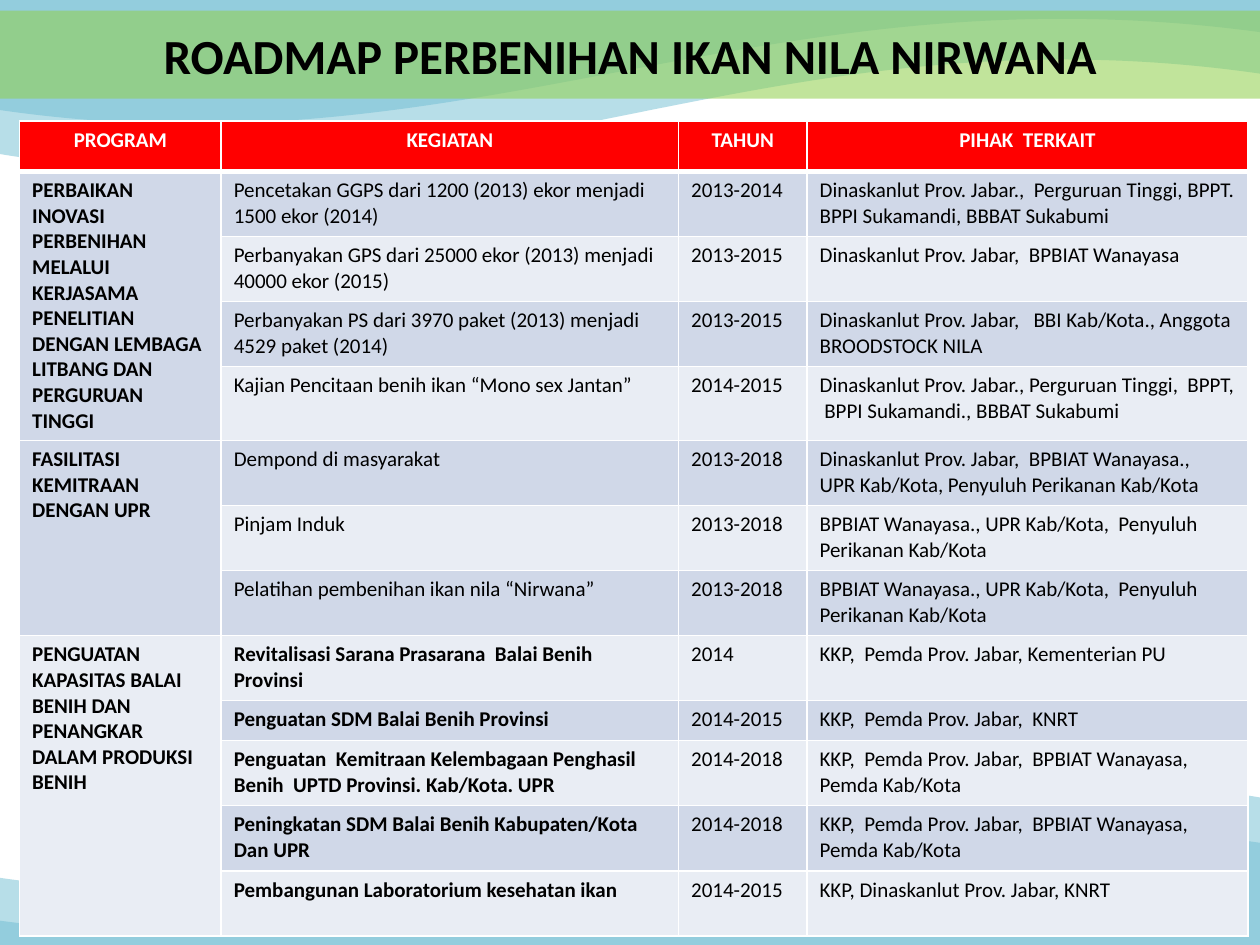
from lxml.etree import SubElement
from pptx import Presentation
from pptx.dml.color import RGBColor
from pptx.enum.text import MSO_ANCHOR, PP_ALIGN
from pptx.oxml.ns import qn
from pptx.util import Pt

FONT = "Calibri"
BLACK = RGBColor(0x00, 0x00, 0x00)
WHITE = RGBColor(0xFF, 0xFF, 0xFF)
RED = RGBColor(0xFF, 0x00, 0x00)
GREEN = RGBColor(0x92, 0xD0, 0x50)
LIGHT_BLUE = RGBColor(0xB7, 0xDE, 0xE8)
MID_BLUE = RGBColor(0x93, 0xCD, 0xDD)
BANDS = [RGBColor(0xD0, 0xD8, 0xE8), RGBColor(0xE9, 0xED, 0xF4)]

# Each wave: colour, four Bezier points, lowest level, closing corners,
# and the place of its turned twin at the foot of the slide
WAVES = [
    (LIGHT_BLUE, [(722.9, 42.5), (434.2, 0), (272.2, 133.2), (-1.4, 87.8)], 97.2,
     [(-2.9, -0.7), (257.8, -2.2), (722.9, 0)], (-3.6, 446.4)),
    (MID_BLUE, [(722.2, 18.7), (433.4, -20.9), (271.4, 103), (-2.2, 62.6)], 71.3,
     [(-2.2, -0.7), (111.6, -3.6), (720, -0.7)], (-3.6, 473)),
]

HEADERS = ["PROGRAM", "KEGIATAN", "TAHUN", "PIHAK  TERKAIT"]
COL_WIDTHS = [115.2, 261.4, 73.4, 252]
ROW_HEIGHTS = [28.9] + [37.2] * 3 + [42.1] + [37.2] * 4 + [22.8] + [37.2] * 3
HANGING_ROWS = {2, 8, 9, 12}

# Each program: name, whether its activities are bold, and its rows
PROGRAMS = [
    ("PERBAIKAN INOVASI PERBENIHAN MELALUI KERJASAMA PENELITIAN DENGAN "
     "LEMBAGA LITBANG DAN PERGURUAN TINGGI", False, [
         ("Pencetakan GGPS dari 1200 (2013) ekor menjadi 1500 ekor (2014)", "2013-2014",
          "Dinaskanlut Prov. Jabar.,  Perguruan Tinggi, BPPT. BPPI Sukamandi, BBBAT Sukabumi"),
         ("Perbanyakan GPS dari 25000 ekor (2013) menjadi 40000 ekor (2015)", "2013-2015",
          "Dinaskanlut Prov. Jabar,  BPBIAT Wanayasa"),
         ("Perbanyakan PS dari 3970 paket (2013) menjadi 4529 paket (2014)", "2013-2015",
          "Dinaskanlut Prov. Jabar,   BBI Kab/Kota., Anggota BROODSTOCK NILA"),
         ("Kajian Pencitaan benih ikan “Mono sex Jantan”", "2014-2015",
          "Dinaskanlut Prov. Jabar., Perguruan Tinggi,  BPPT,  BPPI Sukamandi., BBBAT Sukabumi"),
     ]),
    ("FASILITASI KEMITRAAN DENGAN UPR", False, [
        ("Dempond di masyarakat", "2013-2018",
         "Dinaskanlut Prov. Jabar,  BPBIAT Wanayasa.,  UPR Kab/Kota, Penyuluh Perikanan Kab/Kota"),
        ("Pinjam Induk", "2013-2018",
         "BPBIAT Wanayasa., UPR Kab/Kota,  Penyuluh Perikanan Kab/Kota"),
        ("Pelatihan pembenihan ikan nila “Nirwana”", "2013-2018",
         "BPBIAT Wanayasa., UPR Kab/Kota,  Penyuluh Perikanan Kab/Kota"),
    ]),
    ("PENGUATAN KAPASITAS BALAI BENIH DAN PENANGKAR DALAM PRODUKSI BENIH", True, [
        ("Revitalisasi Sarana Prasarana  Balai Benih Provinsi", "2014",
         "KKP,  Pemda Prov. Jabar, Kementerian PU"),
        ("Penguatan SDM Balai Benih Provinsi", "2014-2015",
         "KKP,  Pemda Prov. Jabar,  KNRT"),
        ("Penguatan  Kemitraan Kelembagaan Penghasil Benih  UPTD Provinsi. Kab/Kota. UPR",
         "2014-2018", "KKP,  Pemda Prov. Jabar,  BPBIAT Wanayasa, Pemda Kab/Kota"),
        ("Peningkatan SDM Balai Benih Kabupaten/Kota Dan UPR", "2014-2018",
         "KKP,  Pemda Prov. Jabar,  BPBIAT Wanayasa, Pemda Kab/Kota"),
        ("Pembangunan Laboratorium kesehatan ikan", "2014-2015",
         "KKP, Dinaskanlut Prov. Jabar, KNRT"),
    ]),
]


def add_wave(shapes, color, curve, lowest, corners):
    # The lowest point sizes the outline, then gives way to the curve
    outline = [curve[0], (curve[2][0], lowest), curve[3], *corners]
    points = [(Pt(x), Pt(y)) for x, y in outline]
    builder = shapes.build_freeform(*points[0])
    builder.add_line_segments(points[1:], close=True)
    sp = builder.convert_to_shape()
    lines = list(sp._element.iter(qn("a:lnTo")))
    bend = lines[0].makeelement(qn("a:cubicBezTo"), {})
    for x, y in curve[1:]:
        SubElement(bend, qn("a:pt"), x=str(Pt(x) - sp.left), y=str(Pt(y) - sp.top))
    lines[0].addprevious(bend)
    for line in lines[:2]:
        line.getparent().remove(line)
    sp.shadow.inherit = False
    sp.fill.solid()
    sp.fill.fore_color.rgb = color
    sp.line.fill.background()
    return sp


def add_background(prs, s):
    """Waves at the head and the foot, kept on the slide master."""
    for at_foot in (True, False):
        group = s.shapes.add_group_shape()
        for color, curve, lowest, corners, foot in WAVES:
            sp = add_wave(group.shapes, color, curve, lowest, corners)
            if at_foot:
                sp.left, sp.top = Pt(foot[0]), Pt(foot[1])
                sp.rotation = 180
        group.shapes._recalculate_extents()
        prs.slide_master.shapes._spTree.insert(2, group._element)


def write(tf, text, size, color, bold, align):
    p = tf.paragraphs[0]
    p.alignment = align
    r = p.add_run()
    r.text = text
    r.font.name = FONT
    r.font.size = Pt(size)
    r.font.bold = bold
    r.font.color.rgb = color
    return p


def format_title(s, text):
    sp = s.shapes.title
    sp.left, sp.top, sp.width, sp.height = Pt(0), Pt(6), Pt(720), Pt(50.4)
    sp.fill.solid()
    sp.fill.fore_color.rgb = GREEN
    color = sp._element.spPr.find(qn("a:solidFill"))[0]
    SubElement(color, qn("a:alpha")).set("val", "57000")
    tf = sp.text_frame
    tf.word_wrap = True
    tf.vertical_anchor = MSO_ANCHOR.MIDDLE
    write(tf, text, 28, BLACK, True, PP_ALIGN.CENTER)


def set_borders(cell, top=1, bottom=1):
    tcPr = cell._tc.get_or_add_tcPr()
    widths = {"a:lnL": 1, "a:lnR": 1, "a:lnT": top, "a:lnB": bottom}
    for i, (tag, width) in enumerate(widths.items()):
        ln = tcPr.makeelement(qn(tag), {"w": str(Pt(width))})
        SubElement(SubElement(ln, qn("a:solidFill")), qn("a:srgbClr")).set("val", str(WHITE))
        tcPr.insert(i, ln)


def fill_cell(cell, text, fill, color=BLACK, bold=False, align=PP_ALIGN.LEFT, hanging=False):
    cell.fill.solid()
    cell.fill.fore_color.rgb = fill
    if text:
        p = write(cell.text_frame, text, 12, color, bold, align)
        if hanging:
            pPr = p._p.get_or_add_pPr()
            pPr.set("marL", str(Pt(14.4)))
            pPr.set("indent", str(-Pt(14.4)))


def add_roadmap(s):
    frame = s.shapes.add_table(len(ROW_HEIGHTS), len(COL_WIDTHS), Pt(11.2), Pt(69.1),
                               Pt(sum(COL_WIDTHS)), Pt(sum(ROW_HEIGHTS)))
    table = frame.table
    for column, width in zip(table.columns, COL_WIDTHS):
        column.width = Pt(width)
    for row, height in zip(table.rows, ROW_HEIGHTS):
        row.height = Pt(height)

    # Header row
    for col, text in enumerate(HEADERS):
        fill_cell(table.cell(0, col), text, RED, WHITE, True, PP_ALIGN.CENTER)

    # Programs, each spanning its activities
    row = 1
    for program, bold, activities in PROGRAMS:
        first, last = row, row + len(activities) - 1
        table.cell(first, 0).merge(table.cell(last, 0))
        for activity, years, parties in activities:
            band = BANDS[(row - 1) % 2]
            fill_cell(table.cell(row, 0), program if row == first else "", band, bold=True)
            fill_cell(table.cell(row, 1), activity, band, bold=bold)
            fill_cell(table.cell(row, 2), years, band)
            fill_cell(table.cell(row, 3), parties, band, hanging=row in HANGING_ROWS)
            row += 1

    # White grid, thicker under the header
    for i in range(len(ROW_HEIGHTS)):
        for col in range(len(COL_WIDTHS)):
            set_borders(table.cell(i, col), top=3 if i == 1 else 1, bottom=3 if i == 0 else 1)


def main():
    prs = Presentation()
    prs.slide_width, prs.slide_height = Pt(720), Pt(540)
    s = prs.slides.add_slide(prs.slide_layouts[5])
    add_background(prs, s)
    format_title(s, "ROADMAP PERBENIHAN IKAN NILA NIRWANA")
    add_roadmap(s)
    prs.save("out.pptx")


if __name__ == "__main__":
    main()
